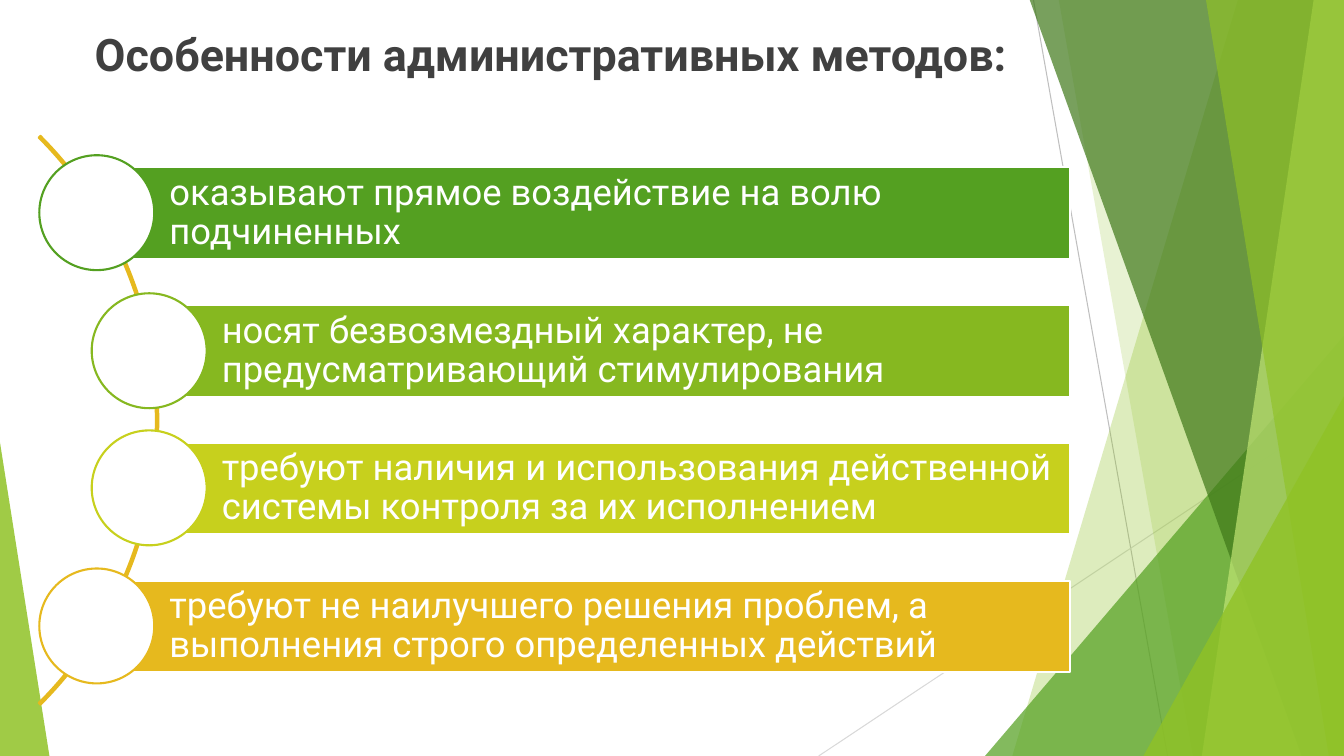
from dataclasses import dataclass

from lxml import etree
from pptx import Presentation
from pptx.dml.color import RGBColor
from pptx.enum.shapes import MSO_CONNECTOR, MSO_SHAPE
from pptx.enum.text import MSO_ANCHOR, PP_ALIGN
from pptx.oxml.ns import qn
from pptx.util import Emu, Pt

STRAIGHT = MSO_CONNECTOR.STRAIGHT
RECTANGLE, OVAL = MSO_SHAPE.RECTANGLE, MSO_SHAPE.OVAL
ARC = MSO_SHAPE.BLOCK_ARC
TRIANGLE = MSO_SHAPE.ISOSCELES_TRIANGLE
LEFT, CENTER = PP_ALIGN.LEFT, PP_ALIGN.CENTER
MIDDLE = MSO_ANCHOR.MIDDLE
EMU_PER_PX = 9144
WIDTH, HEIGHT = 1333, 750


@dataclass(frozen=True)
class Theme:
    font: str = "Roboto"
    title_size: int = 32
    bar_size: int = 26
    outline: float = 1.5
    hairline: float = 0.75
    white: str = "FFFFFF"
    title: str = "404040"
    gray: str = "BFBFBF"
    pale_gray: str = "D9D9D9"
    lime: str = "90C226"
    pale_lime: str = "C0E474"
    green: str = "54A021"
    dark_green: str = "3F7819"
    leaf: str = "86B820"
    yellow: str = "C7D01D"
    amber: str = "E6B91E"


def px(length):
    return Emu(length * EMU_PER_PX)


class SlideBuilder:
    """Draws styled elements on the current slide, measured in px."""

    def __init__(self, slide, theme):
        self.shapes = slide.shapes
        self.theme = theme

    def paint(self, shape, fill=None, line=None, opacity=100):
        shape.shadow.inherit = False
        if fill:
            shape.fill.solid()
            shape.fill.fore_color.rgb = RGBColor.from_string(fill)
            if opacity < 100:
                color = shape._element.spPr.find(qn("a:solidFill"))[0]
                etree.SubElement(color, qn("a:alpha"), val=str(opacity * 1000))
        else:
            shape.fill.background()
        if line:
            shape.line.color.rgb = RGBColor.from_string(line)
            shape.line.width = Pt(self.theme.outline)
        else:
            shape.line.fill.background()
        return shape

    def shape(self, kind, box, adjustments=(), **style):
        shape = self.shapes.add_shape(kind, *map(px, box))
        for index, value in enumerate(adjustments):
            shape.adjustments[index] = value
        return self.paint(shape, **style)

    def facet(self, points, **style):
        builder = self.shapes.build_freeform(*points[0], scale=EMU_PER_PX)
        builder.add_line_segments(points[1:], close=True)
        return self.paint(builder.convert_to_shape(), **style)

    def line(self, start, end, color):
        line = self.shapes.add_connector(STRAIGHT, *map(px, start + end))
        line.line.color.rgb = RGBColor.from_string(color)
        line.line.width = Pt(self.theme.hairline)
        etree.SubElement(line._element.spPr, qn("a:effectLst"))

    def set_text(self, frame, text, size, color, align, bold=False):
        frame.word_wrap = True
        paragraph = frame.paragraphs[0]
        paragraph.text = text
        paragraph.alignment = align
        paragraph.font.name = self.theme.font
        paragraph.font.size = Pt(size)
        paragraph.font.bold = bold
        paragraph.font.color.rgb = RGBColor.from_string(color)
        return paragraph

    def title(self, box, text):
        frame = self.shapes.add_textbox(*map(px, box)).text_frame
        heading = self.set_text(frame, text, self.theme.title_size,
                                self.theme.title, CENTER, bold=True)
        heading.space_before = Pt(10)

    def bar(self, box, text, color):
        bar = self.shape(RECTANGLE, box, fill=color, line=self.theme.white)
        frame = bar.text_frame
        frame.vertical_anchor = MIDDLE
        frame.margin_left = px(72)
        frame.margin_top = frame.margin_right = frame.margin_bottom = px(7)
        label = self.set_text(frame, text, self.theme.bar_size,
                              self.theme.white, LEFT)
        label.line_spacing = 0.9


def draw_backdrop(draw, theme):
    draw.line((1025, 0), (1158, HEIGHT), theme.gray)
    draw.line((WIDTH, 403), (812, HEIGHT), theme.pale_gray)

    def band(top, bottom, color, opacity):
        draw.facet([(top, -1), (WIDTH, -1), (WIDTH, HEIGHT), (bottom, HEIGHT)],
                   fill=color, opacity=opacity)

    def corner(left, top, width, apex, color, opacity):
        draw.shape(TRIANGLE, (left, top, width, HEIGHT - top), [apex],
                   fill=color, opacity=opacity)

    band(1228, 1004, theme.lime, 30)
    band(1050, 1183, theme.lime, 20)
    corner(977, 333, 356, 1, theme.green, 72)
    band(1021, 1291, theme.dark_green, 70)
    band(1303, 1192, theme.pale_lime, 70)
    band(1196, 1318, theme.lime, 65)
    corner(1134, 393, 199, 1, theme.lime, 80)
    corner(0, 439, 49, 0, theme.lime, 85)


def draw_features(draw, theme):
    features = [
        ("оказывают прямое воздействие на волю подчиненных", theme.green, 96),
        ("носят безвозмездный характер, не предусматривающий стимулирования",
         theme.leaf, 148),
        ("требуют наличия и использования действенной системы контроля "
         "за их исполнением", theme.yellow, 148),
        ("требуют не наилучшего решения проблем, а выполнения строго "
         "определенных действий", theme.amber, 96),
    ]
    first_top, last_top, bar_height, bar_right = 166, 576, 91, 1061
    circle = 114
    pitch = (last_top - first_top) / (len(features) - 1)

    draw.shape(ARC, (-641, 18, 798, 798), [189, 27, 0.003], line=theme.amber)
    for row, (text, color, left) in enumerate(features):
        top = round(first_top + row * pitch)
        draw.bar((left, top, bar_right - left, bar_height), text, color)
        circle_top = top - (circle - bar_height) // 2 - 1
        draw.shape(OVAL, (left - circle // 2, circle_top, circle, circle),
                   fill=theme.white, line=color)


def main():
    presentation = Presentation()
    presentation.slide_width = px(WIDTH)
    presentation.slide_height = px(HEIGHT)
    slide = presentation.slides.add_slide(presentation.slide_layouts[6])
    theme = Theme()
    draw = SlideBuilder(slide, theme)
    draw_backdrop(draw, theme)
    draw.title((0, 22, 1093, 71), "Особенности административных методов:")
    draw_features(draw, theme)
    presentation.save("out.pptx")


if __name__ == "__main__":
    main()
